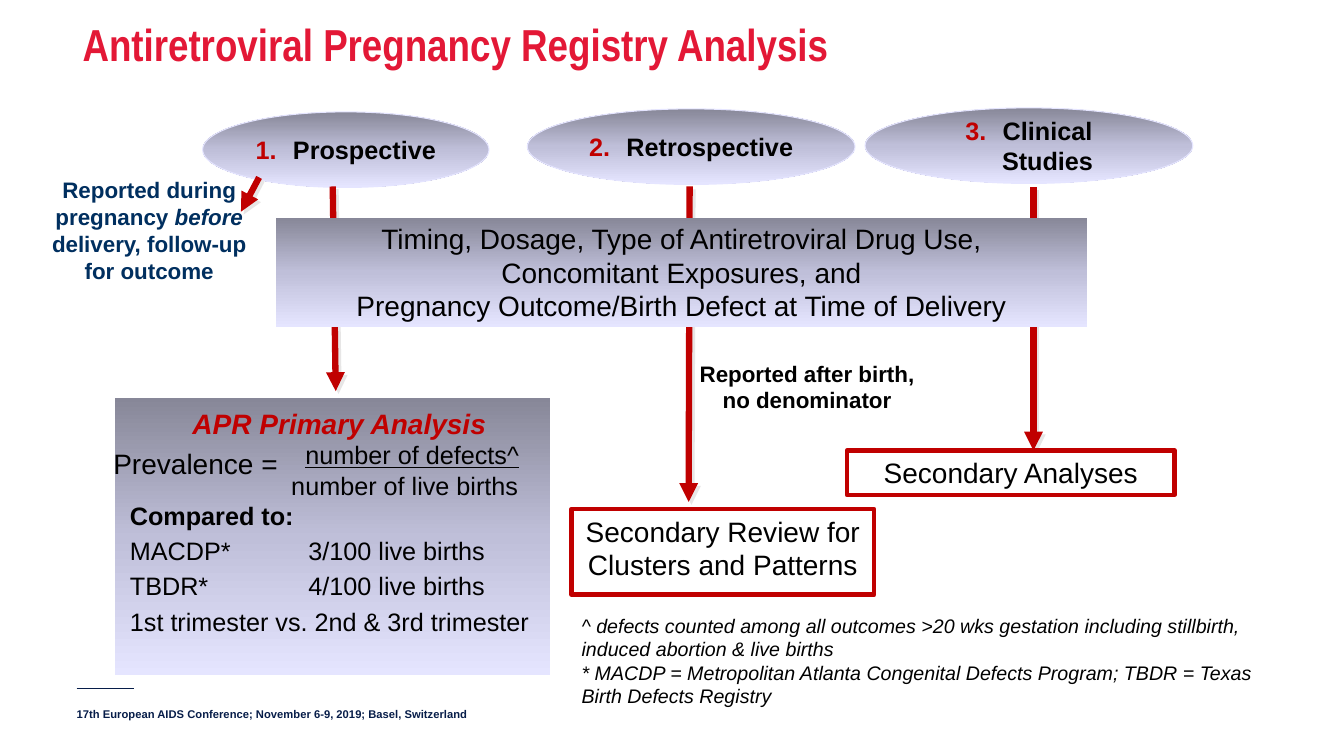
from copy import deepcopy
from dataclasses import dataclass

from lxml import etree
from pptx import Presentation
from pptx.dml.color import RGBColor
from pptx.enum.shapes import MSO_CONNECTOR, MSO_SHAPE
from pptx.enum.text import MSO_ANCHOR, PP_ALIGN
from pptx.oxml.ns import qn
from pptx.util import Inches, Pt

OVAL, RECT = MSO_SHAPE.OVAL, MSO_SHAPE.RECTANGLE
STRAIGHT = MSO_CONNECTOR.STRAIGHT
LEFT, CENTER = PP_ALIGN.LEFT, PP_ALIGN.CENTER
TOP, MIDDLE = MSO_ANCHOR.TOP, MSO_ANCHOR.MIDDLE

BLACK = RGBColor(0, 0, 0)
WHITE = RGBColor(0xFF, 0xFF, 0xFF)
RED = RGBColor(0xC0, 0, 0)
TITLE_RED = RGBColor(0xE3, 0x18, 0x36)
NAVY = RGBColor(0x07, 0x1D, 0x49)
BLUE = RGBColor(0, 0x2F, 0x5F)
LAVENDER = RGBColor(0xE5, 0xE5, 0xFF)
GRADIENT = [RGBColor(0x87, 0x87, 0x98), RGBColor(0xBF, 0xBF, 0xD9), LAVENDER]
SHADOW = RGBColor(0xE7, 0xE6, 0xE6)


@dataclass
class Para:
    text: str
    size: float = 18
    color: RGBColor = BLACK
    bold: bool = False
    italic: bool = False
    underline: bool = False
    align: PP_ALIGN = LEFT
    before: float = 0
    indent: float = 0
    tab: float = 0
    number: int = 0
    font: str = "Arial"
    italic_end: str = ""


@dataclass
class Box:
    left: float
    top: float
    width: float
    height: float
    paras: list[Para]
    anchor: MSO_ANCHOR = TOP
    inset: bool = True


@dataclass
class Arrow:
    x1: float
    y1: float
    x2: float
    y2: float


def add_child(parent, tag: str, **attrs):
    return etree.SubElement(parent, qn(tag), attrs)


def write(sp, box: Box) -> None:
    tf = sp.text_frame
    tf.word_wrap = True
    tf.vertical_anchor = box.anchor
    if not box.inset:
        tf.margin_left = tf.margin_top = tf.margin_right = tf.margin_bottom = 0
    for i, para in enumerate(box.paras):
        p = tf.paragraphs[0] if i == 0 else tf.add_paragraph()
        p.alignment = para.align
        if para.before:
            p.space_before = Pt(para.before)
        pPr = p._p.get_or_add_pPr()
        if para.indent:
            pPr.set("marL", str(Inches(para.indent)))
        if para.number:
            pPr.set("indent", str(-Inches(para.indent)))
            add_child(add_child(pPr, "a:buClr"), "a:srgbClr", val=str(RED))
            add_child(pPr, "a:buFont", typeface="+mj-lt")
            add_child(pPr, "a:buAutoNum", type="arabicPeriod", startAt=str(para.number))
        if para.tab:
            add_child(add_child(pPr, "a:tabLst"), "a:tab", pos=str(Inches(para.tab)), algn="l")
        p.font.name = para.font
        p.font.size = Pt(para.size)
        p.font.bold = para.bold
        p.font.italic = para.italic
        p.font.underline = para.underline
        p.font.color.rgb = para.color
        p.add_run().text = para.text
        if para.italic_end:
            r = p.add_run()
            r.text = para.italic_end
            r.font.italic = True


def add_text(s, box: Box) -> None:
    sp = s.shapes.add_textbox(*map(Inches, (box.left, box.top, box.width, box.height)))
    write(sp, box)


def add_box(s, kind: MSO_SHAPE, box: Box):
    sp = s.shapes.add_shape(kind, *map(Inches, (box.left, box.top, box.width, box.height)))
    sp.shadow.inherit = False
    sp.line.fill.background()
    write(sp, box)
    return sp


def add_gradient_box(s, kind: MSO_SHAPE, box: Box):
    sp = add_box(s, kind, box)
    sp.fill.gradient()
    sp.fill.gradient_angle = 270
    stops = sp._element.spPr.find(qn("a:gradFill")).find(qn("a:gsLst"))
    stops.insert(1, deepcopy(stops[0]))
    for i, (stop, color) in enumerate(zip(sp.fill.gradient_stops, GRADIENT)):
        stop.position = i / 2
        stop.color.rgb = color
    return sp


def add_ellipse(s, box: Box) -> None:
    sp = add_gradient_box(s, OVAL, box)
    sp.line.color.rgb = LAVENDER
    sp.line.width = Pt(0.75)


def add_outlined_box(s, box: Box) -> None:
    sp = add_box(s, RECT, box)
    sp.fill.solid()
    sp.fill.fore_color.rgb = WHITE
    sp.line.color.rgb = RED
    sp.line.width = Pt(3.25)


def add_line(s, a: Arrow, color: RGBColor, width: float):
    c = s.shapes.add_connector(STRAIGHT, *map(Inches, (a.x1, a.y1, a.x2, a.y2)))
    c.line.color.rgb = color
    c.line.width = Pt(width)
    return c, add_child(c._element.spPr, "a:effectLst")


def add_arrow(s, arrow: Arrow) -> None:
    c, effects = add_line(s, arrow, RED, 4.5)
    add_child(c.line._get_or_add_ln(), "a:tailEnd", type="triangle")
    shadow = add_child(effects, "a:outerShdw", dist=str(Pt(2.8)), dir="2700000", algn="ctr")
    add_child(shadow, "a:srgbClr", val=str(SHADOW))


def centered(*lines: str, size: float = 20, bold: bool = False) -> list[Para]:
    return [Para(line, size, bold=bold, align=CENTER) for line in lines]


def source(number: int, name: str) -> list[Para]:
    return [Para(name, bold=True, align=CENTER, indent=0.37, number=number)]


ELLIPSES = [
    Box(2.01, 1.11, 2.84, 0.75, source(1, "Prospective"), MIDDLE),
    Box(5.23, 1.08, 3.25, 0.75, source(2, "Retrospective"), MIDDLE),
    Box(8.58, 1.07, 3.25, 0.75, source(3, "Clinical Studies"), MIDDLE),
]
ARROWS = [
    Arrow(3.3, 1.85, 3.33, 3.88),
    Arrow(6.84, 1.85, 6.83, 4.98),
    Arrow(10.25, 1.86, 10.25, 4.47),
    Arrow(2.57, 1.76, 2.39, 2.1),
]
PANELS = [
    Box(1.14, 3.95, 4.32, 2.75, []),
    Box(2.74, 2.16, 8.04, 1.08, centered(
        "Timing, Dosage, Type of Antiretroviral Drug Use,",
        "Concomitant Exposures, and",
        "Pregnancy Outcome/Birth Defect at Time of Delivery"), MIDDLE),
]
OUTCOMES = [
    Box(8.4, 4.47, 3.25, 0.44, centered("Secondary Analyses")),
    Box(5.67, 5.05, 3, 0.85, centered("Secondary Review for", "Clusters and Patterns")),
]
TEXTS = [
    Box(0.72, 0.12, 10.09, 0.84, [
        Para("Antiretroviral Pregnancy Registry Analysis", 32, TITLE_RED, True, font="Arial Narrow")]),
    Box(1.19, 3.98, 4.75, 3.13, [
        Para("APR Primary Analysis", 20, RED, True, True, indent=0.62),
        Para("number of defects^", underline=True, indent=1.74),
        Para("number of live births", indent=1.6),
        Para("Compared to:", bold=True),
        Para("MACDP*\t3/100 live births", before=3.6, tab=1.77),
        Para("TBDR*\t4/100 live births", before=3.6, tab=1.77),
        Para("1st trimester vs. 2nd & 3rd trimester", before=3.6)]),
    Box(0.99, 4.38, 1.9, 0.44, centered("Prevalence =")),
    Box(0.24, 1.7, 2.48, 1.18, [
        Para("Reported during pregnancy ", 16, BLUE, True, align=CENTER, italic_end="before"),
        Para("delivery, follow-up for outcome", 16, BLUE, True, align=CENTER)]),
    Box(6.47, 3.52, 3.07, 0.64, centered("Reported after birth,", "no denominator", size=16, bold=True)),
    Box(5.67, 6.04, 7.08, 1.07, [
        Para("^ defects counted among all outcomes >20 wks gestation including stillbirth, "
             "induced abortion & live births", 14, italic=True),
        Para("* MACDP = Metropolitan Atlanta Congenital Defects Program; "
             "TBDR = Texas Birth Defects Registry", 14, italic=True)]),
    Box(0.76, 7.02, 11.85, 0.16, [
        Para("17th European AIDS Conference; November 6-9, 2019; Basel, Switzerland", 8, NAVY, True)],
        inset=False),
]


def main() -> None:
    prs = Presentation()
    prs.slide_width, prs.slide_height = Inches(13.33), Inches(7.5)
    s = prs.slides.add_slide(prs.slide_layouts[6])
    add_line(s, Arrow(0.76, 6.83, 1.33, 6.83), NAVY, 0.25)
    for draw, items in ((add_ellipse, ELLIPSES), (add_arrow, ARROWS), (add_outlined_box, OUTCOMES)):
        for item in items:
            draw(s, item)
    for panel in PANELS:
        add_gradient_box(s, RECT, panel)
    for text in TEXTS:
        add_text(s, text)
    prs.save("out.pptx")


if __name__ == "__main__":
    main()
